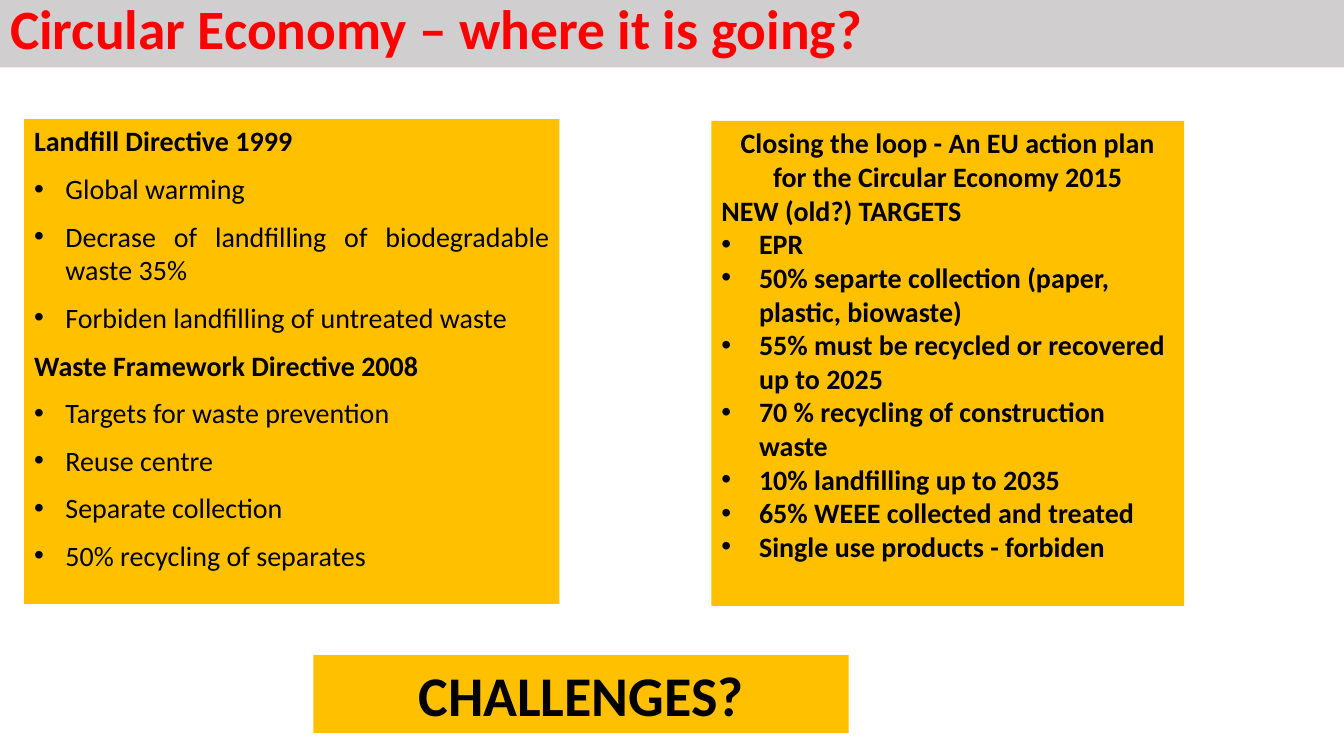
from lxml import etree
from pptx import Presentation
from pptx.dml.color import RGBColor
from pptx.enum import text as t
from pptx.oxml.ns import qn
from pptx.util import Cm, Pt

WIDE, HIGH = 33.87, 19.05
GOLD, GREY, RED, BLACK = "FFC000", "D0CECE", "FF0000", "000000"
LEFT, MID, JUST = t.PP_ALIGN.LEFT, t.PP_ALIGN.CENTER, t.PP_ALIGN.JUSTIFY

TITLE = "Circular Economy – where it is going?"

# Each line: text, bold, bulleted, alignment
PAST = [
    ("Landfill Directive 1999", True, False, JUST),
    ("Global warming", False, True, JUST),
    ("Decrase of landfilling of biodegradable waste 35%", False, True, JUST),
    ("Forbiden landfilling of untreated waste", False, True, JUST),
    ("Waste Framework Directive 2008", True, False, JUST),
    ("Targets for waste prevention", False, True, JUST),
    ("Reuse centre", False, True, JUST),
    ("Separate collection", False, True, JUST),
    ("50% recycling of separates", False, True, JUST),
]
PLAN = [
    ("Closing the loop - An EU action plan for the Circular Economy 2015",
     True, False, MID),
    ("NEW (old?) TARGETS", True, False, LEFT),
    ("EPR", True, True, LEFT),
    ("50% separte collection (paper, plastic, biowaste)", True, True, LEFT),
    ("55% must be recycled or recovered up to 2025", True, True, LEFT),
    ("70 % recycling of construction waste", True, True, LEFT),
    ("10% landfilling up to 2035", True, True, LEFT),
    ("65% WEEE collected and treated", True, True, LEFT),
    ("Single use products - forbiden", True, True, LEFT),
]
ASK = [("CHALLENGES?", True, False, MID)]

# Each panel: place, lines, text size, gap between lines (pt), indent (cm)
PANELS = [
    ((0.61, 3.0, 13.49, 12.22), PAST, 20, 10, 0.79),
    ((17.93, 3.05, 11.91, 12.22), PLAN, 20, 0, 0.95),
    ((7.9, 16.51, 13.49, 1.96), ASK, 40, 0, 0),
]


def paint(shape, tone):
    shape.fill.solid()
    shape.fill.fore_color.rgb = RGBColor.from_string(tone)


def style(para, size, tone, bold):
    for run in para.runs:
        font = run.font
        font.name, font.size, font.bold = "Calibri", Pt(size), bold
        font.color.rgb = RGBColor.from_string(tone)


def bullet(para, indent):
    """Give a paragraph a round bullet with a hanging indent."""
    props = para._p.get_or_add_pPr()
    props.set("marL", str(Cm(indent)))
    props.set("indent", str(-Cm(indent)))
    etree.SubElement(props, qn("a:buFont")).set("typeface", "Arial")
    etree.SubElement(props, qn("a:buChar")).set("char", "•")


def panel(slide, place, lines, size, gap, indent):
    box = slide.shapes.add_textbox(*map(Cm, place))
    paint(box, GOLD)
    frame = box.text_frame
    frame.word_wrap = True
    frame.text = "\n".join(line[0] for line in lines)
    for i, (para, line) in enumerate(zip(frame.paragraphs, lines)):
        words, bold, dot, align = line
        para.alignment = align
        para.space_before = Pt(gap if i else 0)
        if dot:
            bullet(para, indent)
        style(para, size, BLACK, bold)


def head(slide):
    title = slide.shapes.title
    title.left, title.top = Cm(0), Cm(0)
    title.width, title.height = Cm(WIDE), Cm(1.7)
    paint(title, GREY)
    frame = title.text_frame
    frame.text = TITLE
    frame.auto_size = t.MSO_AUTO_SIZE.NONE
    frame.vertical_anchor = t.MSO_ANCHOR.MIDDLE
    para = frame.paragraphs[0]
    para.alignment, para.line_spacing = LEFT, 0.8
    style(para, 39.6, RED, True)


def main():
    deck = Presentation()
    deck.slide_width, deck.slide_height = Cm(WIDE), Cm(HIGH)
    slide = deck.slides.add_slide(deck.slide_layouts[5])
    head(slide)
    for item in PANELS:
        panel(slide, *item)
    deck.save("out.pptx")


if __name__ == "__main__":
    main()
